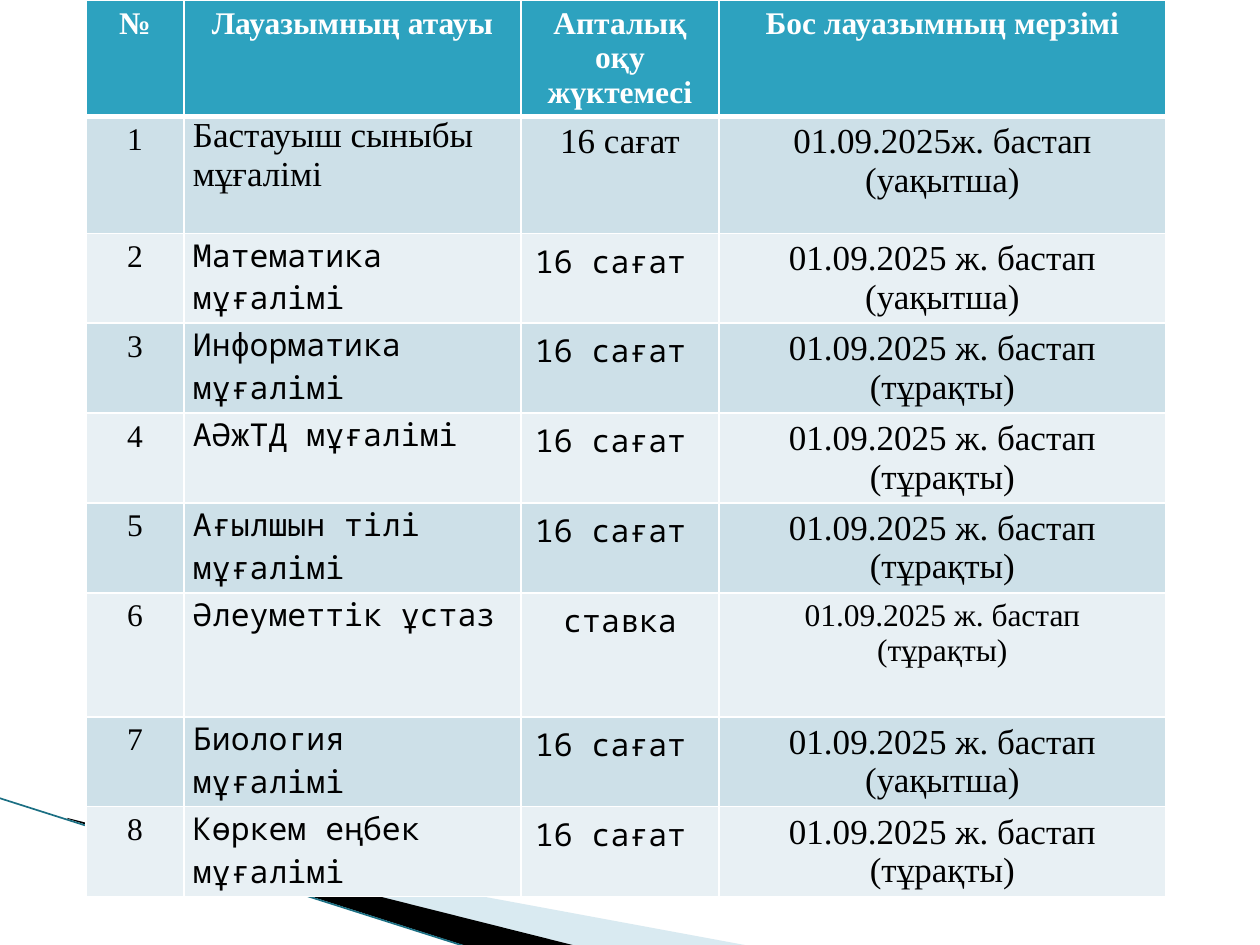
from lxml import etree
from pptx import Presentation
from pptx.dml.color import RGBColor
from pptx.enum.shapes import MSO_CONNECTOR
from pptx.enum.text import PP_ALIGN
from pptx.oxml.ns import qn
from pptx.util import Pt

PX = 914400 // 126
CENTER, LEFT = PP_ALIGN.CENTER, PP_ALIGN.LEFT
STRAIGHT = MSO_CONNECTOR.STRAIGHT
SERIF, MONO = "Times New Roman", "Noto Sans Mono"
COLORS = {"header": "2DA2BF", "odd": "CDE0E8", "even": "E8F0F4", "white": "FFFFFF",
          "black": "000000", "pale": "A0CBDC", "teal": "1B6F83"}

# Content: header, then position, weekly load, start date and term
HEADERS = ["№", "Лауазымның атауы", "Апталық оқу жүктемесі", "Бос лауазымның мерзімі"]
START = "01.09.2025 ж. бастап"
TEMPORARY, PERMANENT = "(уақытша)", "(тұрақты)"
VACANCIES = [
    ("Бастауыш сыныбы мұғалімі", "16 сағат", "01.09.2025ж. бастап", TEMPORARY),
    ("Математика мұғалімі", "16 сағат ", START, TEMPORARY),
    ("Информатика мұғалімі", "16 сағат ", START, PERMANENT),
    ("АӘжТД мұғалімі", "16 сағат ", START, PERMANENT),
    ("Ағылшын тілі мұғалімі", "16 сағат ", START, PERMANENT),
    ("Әлеуметтік ұстаз", "ставка", START, PERMANENT),
    ("Биология мұғалімі", "16 сағат ", START, TEMPORARY),
    ("Көркем еңбек мұғалімі", "16 сағат ", START, PERMANENT),
]
SERIF_ROW, SMALL_DATE_ROW = 1, 6
TABLE_LEFT, TABLE_TOP = 86, 0
COLUMN_WIDTHS = [98, 337, 198, 447]
ROW_HEIGHTS = [116, 117, 89, 90, 89, 90, 124, 90, 89]

# Corner decoration: frame (left, top, width, height) and outline on the slide
PALE_FRAME = (98, 689, 524, 199)
PALE_WEDGE = [(69, 820), (750, 946), (575, 946), (69, 819)]
BLACK_FRAME = (-8, 798, 524, 116)
BLACK_WEDGE = [(67, 818), (576, 946), (469, 947), (68, 819)]
TEAL_EDGE = (-1, 798, 467, 947)


def rgb(name):
    return RGBColor.from_string(COLORS[name])


def add_wedge(frame, points, color, opacity=100):
    builder = slide.shapes.build_freeform(*points[0], scale=PX)
    builder.add_line_segments(points[1:], close=True)
    wedge = builder.convert_to_shape()
    # The outline reaches past its frame, so its points are counted from the frame
    left, top, width, height = (value * PX for value in frame)
    outline = wedge._element.spPr.find(".//" + qn("a:path"))
    outline.set("w", str(width))
    outline.set("h", str(height))
    for point, (x, y) in zip(outline.iter(qn("a:pt")), points):
        point.set("x", str(x * PX - left))
        point.set("y", str(y * PX - top))
    wedge.left, wedge.top, wedge.width, wedge.height = left, top, width, height
    wedge.shadow.inherit = False
    wedge.line.fill.background()
    wedge.fill.solid()
    wedge.fill.fore_color.rgb = rgb(color)
    if opacity < 100:
        srgb = wedge.fill._xPr.find(".//" + qn("a:srgbClr"))
        etree.SubElement(srgb, qn("a:alpha"), val=str(opacity * 1000))


def add_borders(cell, widths):
    properties = cell._tc.get_or_add_tcPr()
    for side, width in zip("LRTB", widths):
        border = etree.SubElement(properties, qn("a:ln" + side), w=str(Pt(width)))
        fill = etree.SubElement(border, qn("a:solidFill"))
        etree.SubElement(fill, qn("a:srgbClr"), val=COLORS["white"])


def fill_cell(row, column, lines, size, font_name, align):
    cell = table.cell(row, column)
    is_header = row == 0
    add_borders(cell, (1, 1, 3 if row == 1 else 1, 3 if is_header else 1))
    cell.fill.solid()
    cell.fill.fore_color.rgb = rgb("header" if is_header else "odd" if row % 2 else "even")
    is_position = column == 1 and not is_header
    cell.margin_left = cell.margin_right = (9 if is_position else 12) * PX
    cell.margin_top = cell.margin_bottom = (0 if is_position else 6) * PX
    cell.text_frame.text = "\n".join(lines)
    for paragraph in cell.text_frame.paragraphs:
        paragraph.alignment = align
        for run in paragraph.runs:
            run.font.size = Pt(size)
            run.font.name = font_name
            run.font.bold = is_header
            run.font.color.rgb = rgb("white" if is_header else "black")


presentation = Presentation()
presentation.slide_width, presentation.slide_height = 1260 * PX, 945 * PX
slide = presentation.slides.add_slide(presentation.slide_layouts[6])

# Corner decoration
add_wedge(PALE_FRAME, PALE_WEDGE, "pale", 40)
add_wedge(BLACK_FRAME, BLACK_WEDGE, "black")
edge = slide.shapes.add_connector(STRAIGHT, *(value * PX for value in TEAL_EDGE))
edge.line.color.rgb = rgb("teal")
edge.line.width = Pt(0.95)
etree.SubElement(edge._element.spPr, qn("a:effectLst"))

# Vacancy table
table = slide.shapes.add_table(
    len(ROW_HEIGHTS), len(COLUMN_WIDTHS), TABLE_LEFT * PX, TABLE_TOP * PX,
    sum(COLUMN_WIDTHS) * PX, sum(ROW_HEIGHTS) * PX).table
for column, width in zip(table.columns, COLUMN_WIDTHS):
    column.width = width * PX
for row, height in zip(table.rows, ROW_HEIGHTS):
    row.height = height * PX

for column, header in enumerate(HEADERS):
    fill_cell(0, column, [header], 18, SERIF, CENTER)
for number, (position, load, start, term) in enumerate(VACANCIES, 1):
    size, font_name = (20, SERIF) if number == SERIF_ROW else (18, MONO)
    date_size = 18 if number == SMALL_DATE_ROW else 20
    fill_cell(number, 0, [str(number)], 18, SERIF, CENTER)
    fill_cell(number, 1, [position], size, font_name, LEFT)
    fill_cell(number, 2, [load], size, font_name, CENTER)
    fill_cell(number, 3, [start, term], date_size, SERIF, CENTER)

presentation.save("out.pptx")
